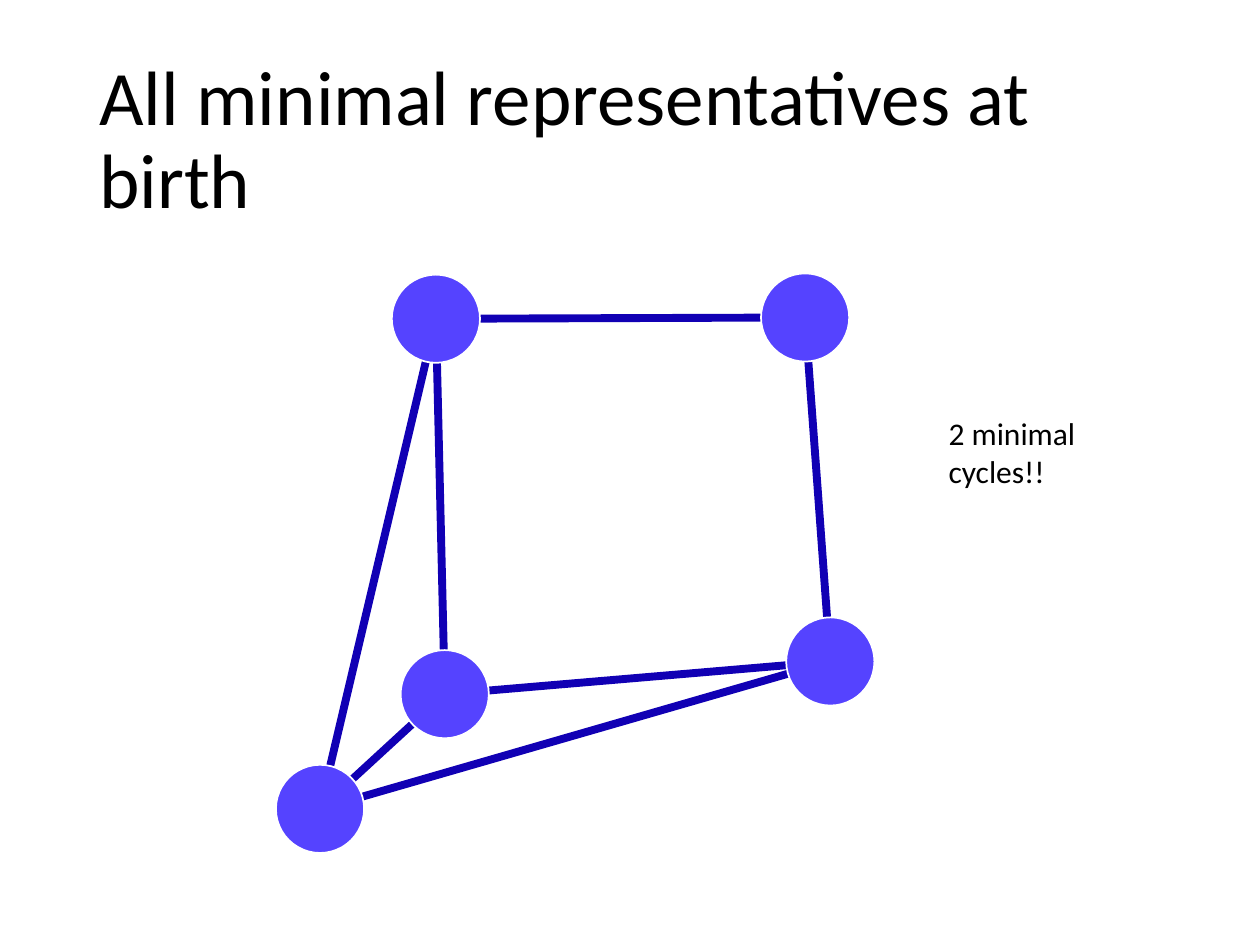
from dataclasses import dataclass

from lxml import etree
from pptx import Presentation
from pptx import util as u
from pptx.dml.color import RGBColor
from pptx.enum import shapes, text
from pptx.oxml import ns


@dataclass
class Theme:
    font: str = "Calibri"
    ink: str = "000000"
    node: str = "5543FF"
    rim: str = "FFFFFF"
    edge: str = "1100B4"
    head: int = 44
    note: int = 18
    thick: float = 4.5
    thin: float = 1


class Board:
    """Current slide, measured on a grid of 100 columns by 75 rows."""

    def __init__(self, deck, theme):
        self.theme = theme
        self.slide = deck.slides.add_slide(deck.slide_layouts[6])
        self.col = deck.slide_width / 100
        self.row = deck.slide_height / 75

    def spot(self, x, y):
        return round(x * self.col), round(y * self.row)

    def color(self, name):
        return RGBColor.from_string(getattr(self.theme, name))

    def label(self, words, x, y, w, h, size, anchor, space=1.0):
        box = self.slide.shapes.add_textbox(*self.spot(x, y), *self.spot(w, h))
        frame = box.text_frame
        frame.word_wrap = True
        frame.vertical_anchor = anchor
        frame.text = words
        para = frame.paragraphs[0]
        para.line_spacing = space
        font = para.runs[0].font
        font.name, font.size = self.theme.font, u.Pt(size)
        font.color.rgb = self.color("ink")

    def edge(self, start, end):
        line = self.slide.shapes.add_connector(
            shapes.MSO_CONNECTOR.STRAIGHT, *self.spot(*start), *self.spot(*end))
        line.line.color.rgb = self.color("edge")
        line.line.width = u.Pt(self.theme.thick)
        etree.SubElement(line._element.spPr, ns.qn("a:effectLst"))

    def node(self, x, y, size=7):
        dot = self.slide.shapes.add_shape(
            shapes.MSO_SHAPE.OVAL,
            *self.spot(x - size / 2, y - size / 2), *self.spot(size, size))
        dot.shadow.inherit = False
        dot.fill.solid()
        dot.fill.fore_color.rgb = self.color("node")
        dot.line.color.rgb = self.color("rim")
        dot.line.width = u.Pt(self.theme.thin)


# Graph: node centres in grid units, and the pairs they join
NODES = {
    "A": (34.6, 25.3),
    "B": (63.9, 25.2),
    "C": (65.9, 52.5),
    "D": (35.3, 55.1),
    "E": (25.4, 64.2),
}
EDGES = ["DE", "AB", "AD", "BC", "CD", "AE", "CE"]


def main():
    deck = Presentation()
    deck.slide_width, deck.slide_height = u.Inches(10), u.Inches(7.5)
    theme = Theme()
    board = Board(deck, theme)

    # Title
    board.label("All minimal representatives at birth", 6.9, 4, 86.2, 14.5,
                theme.head, text.MSO_ANCHOR.MIDDLE, 0.9)

    # Edges run between centres, beneath the nodes
    for a, b in EDGES:
        board.edge(NODES[a], NODES[b])
    for place in NODES.values():
        board.node(*place)

    # Remark
    board.label("2 minimal cycles!!", 74.3, 32.4, 13.5, 7.1,
                theme.note, text.MSO_ANCHOR.TOP)

    deck.save("out.pptx")


if __name__ == "__main__":
    main()
